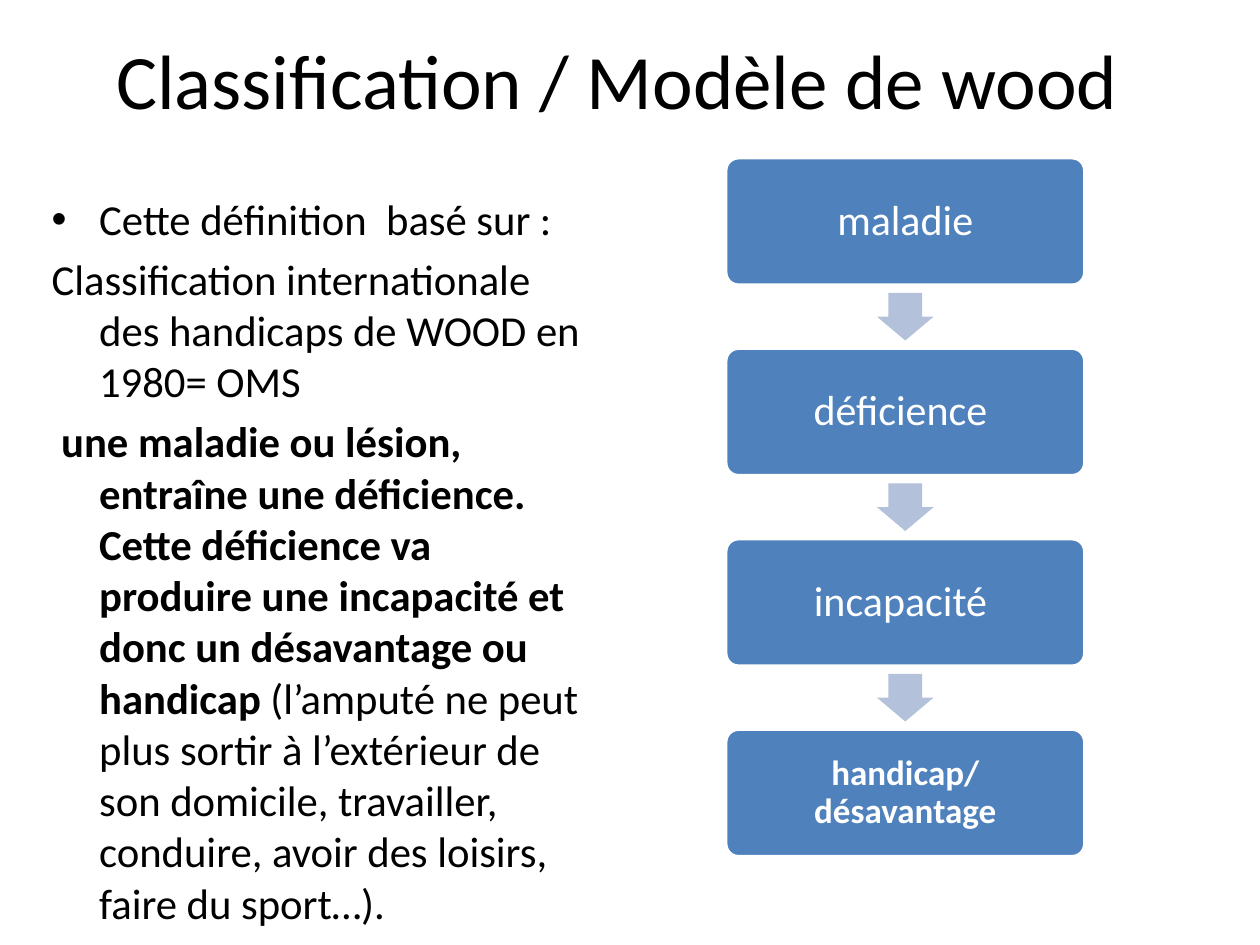
from pptx import Presentation
from pptx.dml.color import RGBColor
from pptx.enum.shapes import MSO_SHAPE as Shape
from pptx.enum.text import MSO_ANCHOR as Anchor, PP_ALIGN as Align
from pptx.oxml.xmlchemy import OxmlElement
from pptx.util import Cm, Pt

BLACK = RGBColor(0x00, 0x00, 0x00)
WHITE = RGBColor(0xFF, 0xFF, 0xFF)
BLUE = RGBColor(0x4F, 0x81, 0xBD)
PALE_BLUE = RGBColor(0xB3, 0xC1, 0xDB)

TITLE = "Classification / Modèle de wood "
# Each paragraph: whether it is bulleted, then its (text, bold) parts
DEFINITION = [
    (True, [("Cette définition  basé sur :", False)]),
    (False, [("Classification internationale des handicaps de WOOD en 1980= OMS", False)]),
    (False, [
        (" une maladie ou lésion, entraîne une déficience.", True),
        ("\n", True),
        ("Cette déficience va produire une incapacité et donc un désavantage ou handicap ", True),
        ("(l’amputé ne peut plus sortir à l’extérieur de son domicile, travailler, "
         "conduire, avoir des loisirs, faire du sport…).", False),
    ]),
]
STAGES = [
    ("maladie", {"size": Pt(24)}),
    ("déficience ", {"size": Pt(24)}),
    ("incapacité ", {"size": Pt(24)}),
    ("handicap/désavantage", {"size": Pt(20), "bold": True}),
]

BODY_SIZE = 24.4
INDENT = Cm(0.96)
STAGE_LEFT, STAGE_TOP = Cm(14.63), Cm(3.18)
STAGE_WIDTH, STAGE_HEIGHT, STAGE_PITCH = Cm(7.24), Cm(2.57), Cm(3.84)
ARROW_WIDTH, ARROW_HEIGHT = Cm(1.14), Cm(0.96)


def add_span(para, text, color, **formats):
    span = para.add_run()
    span.text = text
    span.font.name = "Calibri"
    span.font.color.rgb = color
    for name, value in formats.items():
        setattr(span.font, name, value)


def add_text_box(page, left, top, width, height, anchor):
    frame = page.shapes.add_textbox(left, top, width, height).text_frame
    frame.word_wrap = True
    frame.vertical_anchor = anchor
    return frame


def set_hanging_indent(para, bulleted):
    properties = para._p.get_or_add_pPr()
    properties.set("marL", str(INDENT))
    properties.set("indent", str(-INDENT))
    if bulleted:
        font = OxmlElement("a:buFont")
        font.set("typeface", "Arial")
        bullet = OxmlElement("a:buChar")
        bullet.set("char", "•")
        properties.extend([font, bullet])
    else:
        properties.append(OxmlElement("a:buNone"))


def add_solid(page, kind, left, top, width, height, fill, adjustments):
    shape = page.shapes.add_shape(kind, left, top, width, height)
    shape.shadow.inherit = False
    shape.fill.solid()
    shape.fill.fore_color.rgb = fill
    shape.line.fill.background()
    for index, value in enumerate(adjustments):
        shape.adjustments[index] = value
    return shape


def add_definition(page):
    frame = add_text_box(page, Cm(0.79), Cm(3.76), Cm(11.35), Cm(13.44), Anchor.TOP)
    for index, (bulleted, parts) in enumerate(DEFINITION):
        para = frame.add_paragraph() if index else frame.paragraphs[0]
        set_hanging_indent(para, bulleted)
        if index:
            para.space_before = Pt(5)
        for text, bold in parts:
            if text == "\n":
                para.add_line_break()
            else:
                add_span(para, text, BLACK, size=Pt(BODY_SIZE), bold=bold)


def add_stages(page):
    gap = STAGE_PITCH - STAGE_HEIGHT
    for index, (label, formats) in enumerate(STAGES):
        top = STAGE_TOP + index * STAGE_PITCH
        box = add_solid(page, Shape.ROUNDED_RECTANGLE, STAGE_LEFT, top,
                        STAGE_WIDTH, STAGE_HEIGHT, BLUE, [0.1])
        box.line.color.rgb = WHITE
        box.line.width = Pt(2)
        frame = box.text_frame
        frame.word_wrap = True
        frame.vertical_anchor = Anchor.MIDDLE
        para = frame.paragraphs[0]
        para.alignment = Align.CENTER
        para.line_spacing = 0.9
        add_span(para, label, WHITE, **formats)
        if index < len(STAGES) - 1:
            add_solid(page, Shape.DOWN_ARROW,
                      STAGE_LEFT + (STAGE_WIDTH - ARROW_WIDTH) // 2,
                      top + STAGE_HEIGHT + (gap - ARROW_HEIGHT) // 2,
                      ARROW_WIDTH, ARROW_HEIGHT, PALE_BLUE, [0.6, 0.5])


def main():
    deck = Presentation()
    deck.slide_width, deck.slide_height = Cm(25.4), Cm(19.05)
    page = deck.slides.add_slide(deck.slide_layouts[6])
    title = add_text_box(page, Cm(1.19), Cm(0), Cm(22.86), Cm(3.18), Anchor.MIDDLE)
    title.paragraphs[0].alignment = Align.CENTER
    add_span(title.paragraphs[0], TITLE, BLACK, size=Pt(44))
    add_definition(page)
    add_stages(page)
    deck.save("out.pptx")


if __name__ == "__main__":
    main()
